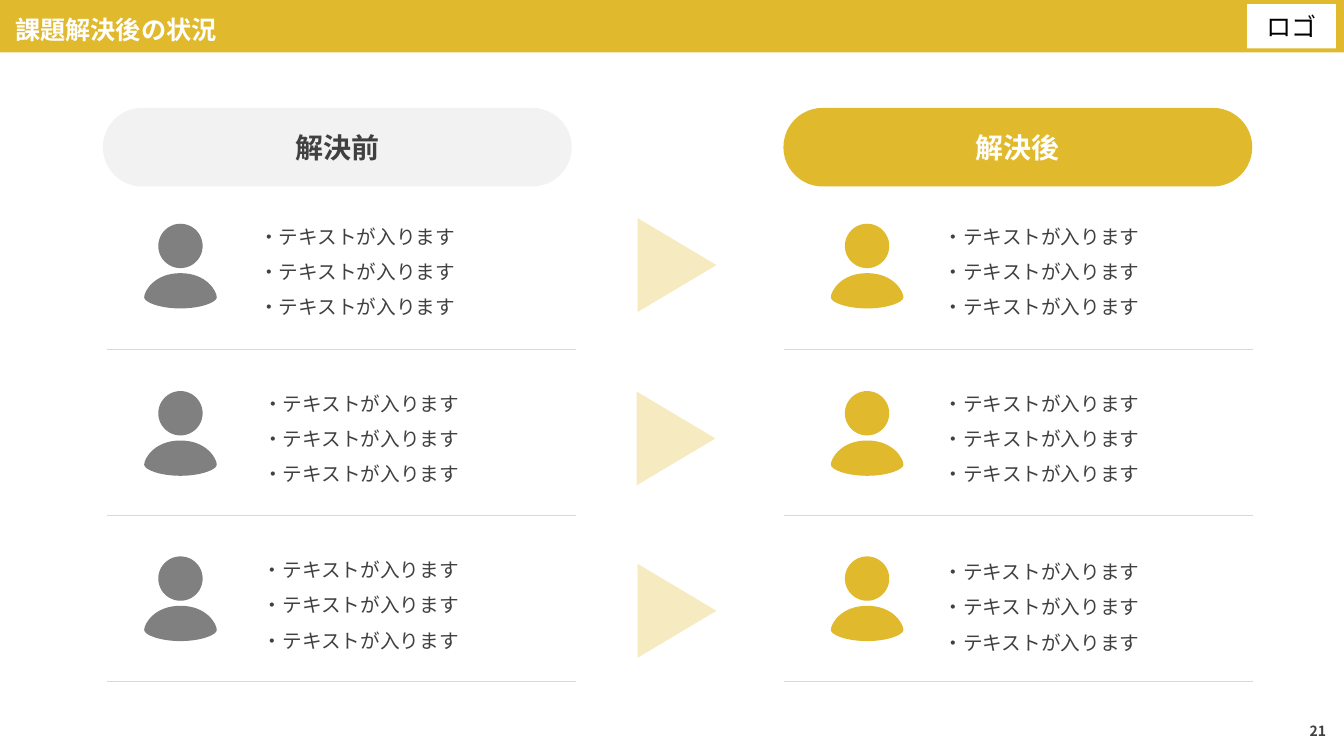
from pptx import Presentation
from pptx.dml.color import RGBColor
from pptx.enum.shapes import MSO_CONNECTOR, MSO_SHAPE
from pptx.enum.text import MSO_ANCHOR, MSO_AUTO_SIZE, PP_ALIGN
from pptx.oxml.ns import qn
from pptx.util import Inches, Pt
from lxml.etree import SubElement

GOLD, PALE_GOLD, WHITE = "E0B92C", "F6EAC0", "FFFFFF"
DARK, GRAY, RULE_GRAY, PALE_GRAY = "404040", "808080", "D9D9D9", "F2F2F2"
JAPANESE = "Noto Sans CJK JP"


def paint(shape, color):
    """Fill a shape with one flat colour, without outline or shadow."""
    shape.fill.solid()
    shape.fill.fore_color.rgb = RGBColor.from_string(color)
    shape.line.fill.background()
    shape.shadow.inherit = False
    return shape


def write(shape, text, size=14, color=DARK, bold=False, font=JAPANESE,
          align=PP_ALIGN.LEFT, anchor=MSO_ANCHOR.MIDDLE, spacing=1.0):
    frame = shape.text_frame
    frame.text = text
    frame.word_wrap = True
    frame.auto_size = MSO_AUTO_SIZE.NONE
    frame.vertical_anchor = anchor
    for paragraph in frame.paragraphs:
        paragraph.alignment = align
        paragraph.line_spacing = spacing
        paragraph.space_before = Pt(0)
        properties = paragraph._p.get_or_add_pPr()
        properties.set("marL", "0")
        properties.set("indent", "0")
        SubElement(properties, qn("a:buNone"))
        for run in paragraph.runs:
            run.font.size = Pt(size)
            run.font.bold = bold
            run.font.name = font
            run.font.color.rgb = RGBColor.from_string(color)
            SubElement(run._r.get_or_add_rPr(), qn("a:ea")).set("typeface", JAPANESE)


prs = Presentation()
prs.slide_width, prs.slide_height = Inches(13.33), Inches(7.5)
slide = prs.slides.add_slide(prs.slide_layouts.get_by_name("Comparison"))
shapes = slide.shapes
slide.background.fill.solid()
slide.background.fill.fore_color.rgb = RGBColor.from_string(GOLD)

# White page below the gold header, behind the placeholders
page = paint(shapes.add_shape(MSO_SHAPE.ROUNDED_RECTANGLE, 0, Inches(0.52),
                              Inches(13.33), Inches(6.98)), WHITE)
page.adjustments[0] = 0
shapes._spTree.insert(2, page._element)

title = shapes.title
title.left, title.top, title.width, title.height = map(Inches, (0.05, 0.07, 12, 0.44))
write(title, "課題解決後の状況", size=18, color=WHITE, bold=True)

logo = paint(shapes.add_shape(MSO_SHAPE.RECTANGLE, Inches(12.37), Inches(0.04),
                              Inches(0.88), Inches(0.44)), WHITE)
write(logo, "ロゴ", size=18, color="000000", align=PP_ALIGN.CENTER)

page_number = shapes.add_textbox(Inches(12.89), Inches(7.13), Inches(0.55), Inches(0.24))
write(page_number, "21", size=10, bold=True)

# Headings and the rules under each row
rule_tops = (3.47, 5.11, 6.76)
for heading, left, rule_left, fill, color in (
        ("解決前", 1.02, 1.06, PALE_GRAY, DARK),
        ("解決後", 7.77, 7.78, GOLD, WHITE)):
    pill = paint(shapes.add_shape(MSO_SHAPE.ROUNDED_RECTANGLE, Inches(left), Inches(1.07),
                                  Inches(4.65), Inches(0.78)), fill)
    pill.adjustments[0] = 0.5
    write(pill, heading, size=20, color=color, bold=True, font="Arial",
          align=PP_ALIGN.CENTER)
    for top in rule_tops:
        rule = shapes.add_connector(MSO_CONNECTOR.STRAIGHT, Inches(rule_left + 4.65),
                                    Inches(top), Inches(rule_left), Inches(top))
        rule.line.color.rgb = RGBColor.from_string(RULE_GRAY)
        rule.line.width = Pt(0.75)
        SubElement(rule._element.spPr, qn("a:effectLst"))

# Arrows from before to after
for left, top in ((6.25, 2.24), (6.24, 3.96), (6.25, 5.67)):
    arrow = paint(shapes.add_shape(MSO_SHAPE.ISOSCELES_TRIANGLE, Inches(left), Inches(top),
                                   Inches(0.93), Inches(0.78)), PALE_GOLD)
    arrow.rotation = 90

# Lists: the layout's four bodies, then two text boxes for the last row
list_places = ((2.47, 2.06, 3.95), (9.26, 2.06, 3.16), (2.51, 3.72, 3.17),
               (9.26, 3.72, 3.16), (2.51, 5.37, 3.17), (9.26, 5.39, 3.16))
bodies = [holder for holder in slide.placeholders if holder.placeholder_format.idx > 0]
for index, (left, top, width) in enumerate(list_places):
    body = bodies[index] if index < len(bodies) else shapes.add_textbox(0, 0, 0, 0)
    body.left, body.top, body.width, body.height = map(Inches, (left, top, width, 1.13))
    write(body, "\n".join(["・テキストが入ります"] * 3), anchor=MSO_ANCHOR.TOP, spacing=1.5)

# People: a round head over shoulders made of four Bézier curves,
# each given by two control points and its end
shoulder_start = (0.36, 0.35)
shoulder_curves = (
    ((0.16, 0.35), (0, 0.29), (0, 0.24)),
    ((0, 0.18), (0.1, 0), (0.36, 0)),
    ((0.62, 0), (0.72, 0.18), (0.72, 0.24)),
    ((0.72, 0.29), (0.56, 0.35), shoulder_start))

for left, color in ((1.43, GRAY), (8.24, GOLD)):
    for top in (2.22, 3.88, 5.52):
        paint(shapes.add_shape(MSO_SHAPE.OVAL, Inches(left + 0.14), Inches(top),
                               Inches(0.44), Inches(0.44)), color)
        builder = shapes.build_freeform(*map(Inches, shoulder_start))
        builder.add_line_segments([tuple(map(Inches, curve[-1])) for curve in shoulder_curves])
        shoulders = paint(builder.convert_to_shape(Inches(left), Inches(top + 0.49)), color)
        # Turn each straight segment into its curve
        for segment, curve in zip(list(shoulders._element.iter(qn("a:lnTo"))), shoulder_curves):
            segment.tag = qn("a:cubicBezTo")
            segment.remove(segment[0])
            for x, y in curve:
                point = SubElement(segment, qn("a:pt"))
                point.set("x", str(Inches(x)))
                point.set("y", str(Inches(y)))

prs.save("out.pptx")
